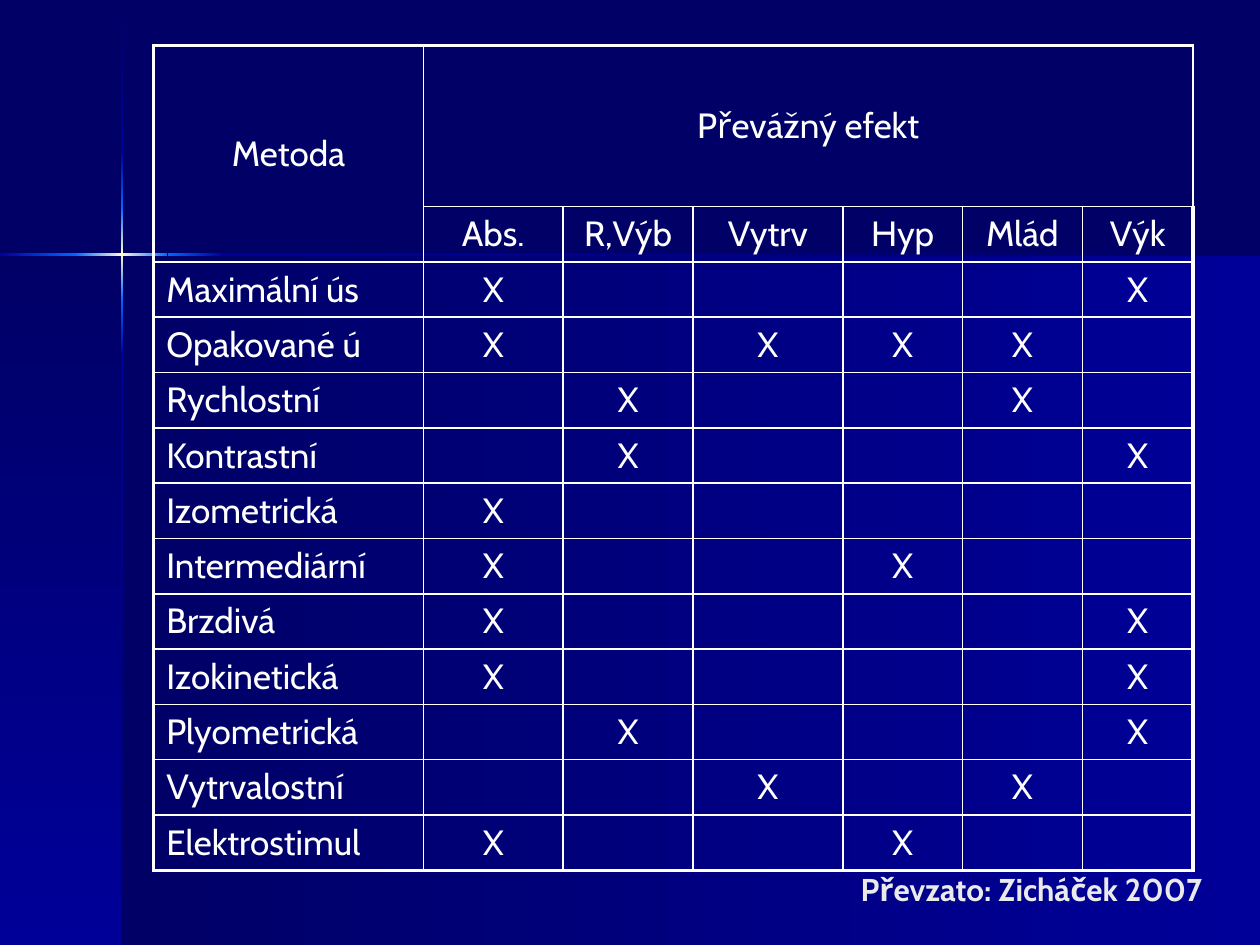
"""Build a slide with a table of strength methods and their main effects."""
from copy import deepcopy
from typing import NamedTuple

from lxml.etree import SubElement
from pptx import Presentation
from pptx.dml.color import RGBColor
from pptx.enum.shapes import MSO_SHAPE as Shape
from pptx.enum.text import MSO_ANCHOR as Anchor, PP_ALIGN as Align
from pptx.oxml.ns import qn
from pptx.util import Inches, Pt

FONT = "Cabin"
NAVY, BLUE, GLOW, CREAM = "000066", "000099", "0066FF", "FFFFCC"
WHITE, PALE = "FFFFFF", "EAEAEA"


class Band(NamedTuple):
    left: float
    top: float
    width: float
    height: float
    stops: tuple[str, ...]
    down: bool


class Method(NamedTuple):
    name: str
    marks: str


BANDS = [
    Band(0.97, 2.02, 9.03, 5.48, (NAVY, BLUE), False),
    Band(0, 2.02, 0.97, 5.48, (NAVY, BLUE), True),
    Band(0.96, 0.01, 0.02, 1.2, (NAVY, BLUE), True),
    Band(0.96, 2.82, 0.02, 4.68, (BLUE, NAVY), True),
    Band(1.77, 2.01, 8.23, 0.02, (BLUE, NAVY), False),
    Band(0.96, 2.38, 0.02, 0.44, (GLOW, BLUE), True),
    Band(0.96, 1.21, 0.02, 0.44, (BLUE, GLOW), True),
    Band(0.96, 1.65, 0.02, 0.73, (GLOW, CREAM, GLOW), True),
    Band(0, 2.01, 0.61, 0.02, (BLUE, GLOW), False),
    Band(1.33, 2.01, 0.44, 0.02, (GLOW, BLUE), False),
    Band(0.6, 2.01, 0.73, 0.02, (GLOW, CREAM, GLOW), False),
]
EFFECTS = ["Abs.", "R,Výb", "Vytrv", "Hyp", "Mlád", "Výk"]
METHODS = [
    Method("Maximální ús", "X....X"),
    Method("Opakované ú", "X.XXX."),
    Method("Rychlostní", ".X..X."),
    Method("Kontrastní", ".X...X"),
    Method("Izometrická", "X....."),
    Method("Intermediární", "X..X.."),
    Method("Brzdivá", "X....X"),
    Method("Izokinetická", "X....X"),
    Method("Plyometrická", ".X...X"),
    Method("Vytrvalostní", "..X.X."),
    Method("Elektrostimul", "X..X.."),
]
WIDTHS = [2.14, 1.11, 1.03, 1.19, 0.95, 0.95, 0.88]
HEAD, ROW = 1.28, 0.43


def color(code: str) -> RGBColor:
    return RGBColor.from_string(code)


def draw_band(slide, band: Band) -> None:
    box = slide.shapes.add_shape(Shape.RECTANGLE, *map(Inches, band[:4]))
    box.shadow.inherit = False
    box.line.fill.background()
    box.fill.gradient()
    box.fill.gradient_angle = 270 if band.down else 0
    stops = box._element.find(".//" + qn("a:gsLst"))
    while len(stops) < len(band.stops):
        stops.append(deepcopy(stops[-1]))
    last = len(band.stops) - 1
    for i, (stop, code) in enumerate(zip(box.fill.gradient_stops, band.stops)):
        stop.position = i / last
        stop.color.rgb = color(code)


def place_title(slide, text: str) -> None:
    title = slide.shapes.title
    slide.shapes._spTree.append(title._element)
    title.left, title.top = Inches(6.73), Inches(6.27)
    title.width, title.height = Inches(8.25), Inches(1.57)
    frame = title.text_frame
    frame.text = text
    frame.vertical_anchor = Anchor.MIDDLE
    para = frame.paragraphs[0]
    para.alignment = Align.LEFT
    style(para.font, 18, PALE, True)


def style(font, size: float, code: str, bold: bool = False) -> None:
    font.name, font.size, font.bold = FONT, Pt(size), bold
    font.color.rgb = color(code)


def add_edge(cell, side: str, outer: bool) -> None:
    width = Pt(2.25 if outer else 1)
    line = SubElement(cell._tc.get_or_add_tcPr(), qn(f"a:ln{side}"), w=str(width))
    fill = SubElement(line, qn("a:solidFill"))
    SubElement(fill, qn("a:srgbClr"), val=WHITE)


def fill_cell(cell, text: str, align: Align, outer: dict[str, bool]) -> None:
    for side, edge in outer.items():
        add_edge(cell, side, edge)
    cell.fill.background()
    cell.vertical_anchor = Anchor.MIDDLE
    cell.text = text
    para = cell.text_frame.paragraphs[0]
    para.alignment = align
    style(para.font, 20, WHITE)


def draw_table(slide) -> None:
    rows = [["Metoda", "Převážný efekt"] + [""] * 5, [""] + EFFECTS]
    rows += [[m.name, *m.marks.replace(".", " ")] for m in METHODS]
    high, wide = len(rows), len(WIDTHS)
    size = map(Inches, (1.22, 0.36, sum(WIDTHS), HEAD + ROW * (high - 1)))
    table = slide.shapes.add_table(high, wide, *size).table
    table.first_row = table.horz_banding = False
    for col, width in zip(table.columns, WIDTHS):
        col.width = Inches(width)
    for r, row in enumerate(rows):
        table.rows[r].height = Inches(ROW if r else HEAD)
        for c, text in enumerate(row):
            outer = {"L": c == 0, "R": c == wide - 1,
                     "T": r == 0, "B": r == high - 1}
            align = Align.LEFT if c == 0 and r > 1 else Align.CENTER
            fill_cell(table.cell(r, c), text.strip(), align, outer)
    table.cell(0, 0).merge(table.cell(1, 0))
    table.cell(0, 1).merge(table.cell(0, wide - 1))


def main() -> None:
    deck = Presentation()
    deck.slide_width, deck.slide_height = Inches(10), Inches(7.5)
    slide = deck.slides.add_slide(deck.slide_layouts[5])
    back = slide.background.fill
    back.solid()
    back.fore_color.rgb = color(NAVY)
    for band in BANDS:
        draw_band(slide, band)
    place_title(slide, "Převzato: Zicháček 2007")
    draw_table(slide)
    deck.save("out.pptx")


if __name__ == "__main__":
    main()
